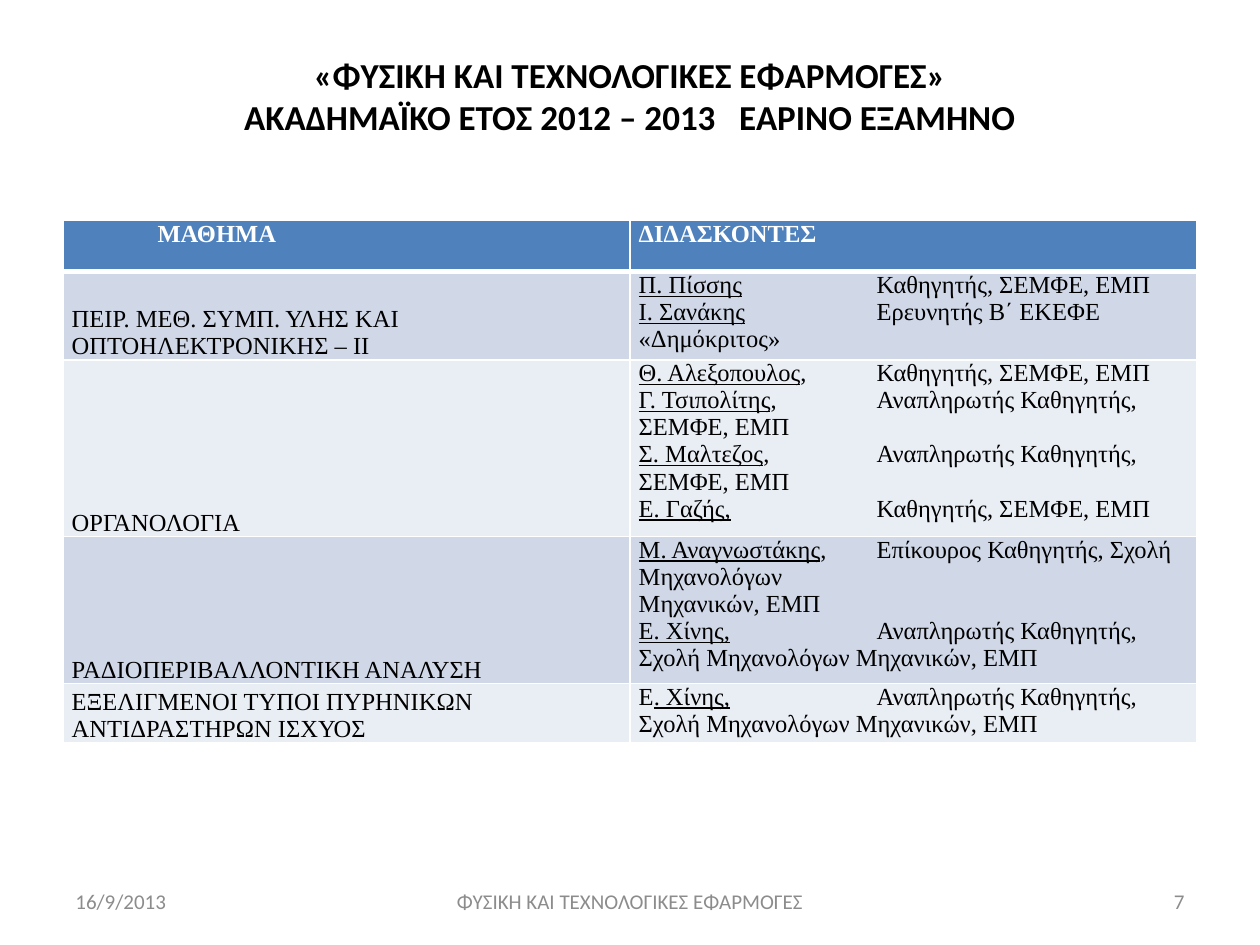
from lxml.etree import SubElement, fromstring
from pptx import Presentation
from pptx.dml.color import RGBColor
from pptx.enum.text import MSO_ANCHOR as Anchor, PP_ALIGN as Align
from pptx.oxml.ns import qn
from pptx.util import Pt

COLORS = {"title": "000000", "body": "000000", "header_text": "FFFFFF", "footer": "8C8C8C",
          "border": "FFFFFF", "header": "4F81BD", "odd": "D0D8E8", "even": "E9EDF4"}
TITLE = ["«ΦΥΣΙΚΗ ΚΑΙ ΤΕΧΝΟΛΟΓΙΚΕΣ ΕΦΑΡΜΟΓΕΣ»",
         "ΑΚΑΔΗΜΑΪΚΟ ΕΤΟΣ 2012 – 2013   ΕΑΡΙΝΟ ΕΞΑΜΗΝΟ"]
HEADERS = ["ΜΑΘΗΜΑ", "ΔΙΔΑΣΚΟΝΤΕΣ"]
COURSES = [
    ("ΠΕΙΡ. ΜΕΘ. ΣΥΜΠ. ΥΛΗΣ ΚΑΙ ΟΠΤΟΗΛΕΚΤΡΟΝΙΚΗΣ – II", [
        "|Π. Πίσσης|\tΚαθηγητής, ΣΕΜΦΕ, ΕΜΠ",
        "|Ι. Σανάκης|\tΕρευνητής Β΄ ΕΚΕΦΕ «Δημόκριτος»"]),
    ("ΟΡΓΑΝΟΛΟΓΙΑ", [
        "|Θ. Αλεξοπουλος|,\tΚαθηγητής, ΣΕΜΦΕ, ΕΜΠ",
        "|Γ. Τσιπολίτης|,\tΑναπληρωτής Καθηγητής, ΣΕΜΦΕ, ΕΜΠ",
        "|Σ. Μαλτεζος|,\tΑναπληρωτής Καθηγητής, ΣΕΜΦΕ, ΕΜΠ",
        "|Ε. Γαζής,|\tΚαθηγητής, ΣΕΜΦΕ, ΕΜΠ"]),
    ("ΡΑΔΙΟΠΕΡΙΒΑΛΛΟΝΤΙΚΗ ΑΝΑΛΥΣΗ", [
        "|Μ. Αναγνωστάκης|,\tΕπίκουρος Καθηγητής, Σχολή Μηχανολόγων",
        "Μηχανικών, ΕΜΠ",
        "|Ε. Χίνης,|\tΑναπληρωτής Καθηγητής, Σχολή Μηχανολόγων Μηχανικών, ΕΜΠ"]),
    ("ΕΞΕΛΙΓΜΕΝΟΙ ΤΥΠΟΙ ΠΥΡΗΝΙΚΩΝ ΑΝΤΙΔΡΑΣΤΗΡΩΝ ΙΣΧΥΟΣ", [
        "Ε|. Χίνης,|\tΑναπληρωτής Καθηγητής, Σχολή Μηχανολόγων Μηχανικών, ΕΜΠ"]),
]


class SlideBuilder:
    """Draws styled text and tables on the current slide."""

    heading_font = "Calibri"
    table_font = "Times New Roman"
    role_tab = 136

    def __init__(self, slide):
        self.slide = slide

    def fill_text(self, frame, lines, font, size, color, bold=False, align=Align.LEFT):
        for index, line in enumerate(lines):
            paragraph = frame.paragraphs[0] if index == 0 else frame.add_paragraph()
            paragraph.alignment = align
            paragraph.font.name = font
            paragraph.font.size = Pt(size)
            paragraph.font.bold = bold
            paragraph.font.color.rgb = RGBColor.from_string(COLORS[color])
            for position, text in enumerate(line.split("|")):
                if text:
                    run = paragraph.add_run()
                    run.text = text
                    if position % 2:
                        run.font.underline = True

    def text(self, box, lines, size, color, bold=False, align=Align.LEFT, bottom=3.6):
        frame = self.slide.shapes.add_textbox(*map(Pt, box)).text_frame
        frame.word_wrap = True
        frame.vertical_anchor = Anchor.MIDDLE
        frame.margin_bottom = Pt(bottom)
        self.fill_text(frame, lines, self.heading_font, size, color, bold, align)

    def border(self, cell, top, bottom):
        properties = cell._tc.get_or_add_tcPr()
        widths = {"lnL": 1, "lnR": 1, "lnT": top, "lnB": bottom}
        for index, (side, width) in enumerate(widths.items()):
            line = fromstring(f'<a:{side} xmlns:a="http://schemas.openxmlformats.org/drawingml/2006/main"'
                              f' w="{Pt(width)}"/>')
            fill = SubElement(line, qn("a:solidFill"))
            SubElement(fill, qn("a:srgbClr"), val=COLORS["border"])
            properties.insert(index, line)

    def cell(self, cell, lines, fill, color="body", bold=False, anchor=Anchor.TOP,
             align=Align.LEFT, top=1, bottom=1):
        cell.fill.solid()
        cell.fill.fore_color.rgb = RGBColor.from_string(COLORS[fill])
        cell.margin_left = cell.margin_right = Pt(5)
        cell.margin_top = cell.margin_bottom = 0
        cell.vertical_anchor = anchor
        self.fill_text(cell.text_frame, lines, self.table_font, 14, color, bold, align)
        self.border(cell, top, bottom)

    def add_role_tab(self, cell):
        for paragraph in cell.text_frame.paragraphs:
            properties = paragraph._p.get_or_add_pPr()
            tabs = SubElement(properties, qn("a:tabLst"))
            SubElement(tabs, qn("a:tab"), pos=str(Pt(self.role_tab)), algn="l")
            properties.insert(0, tabs)

    def table(self, box, headers, courses):
        shape = self.slide.shapes.add_table(len(courses) + 1, len(headers), *map(Pt, box))
        table = shape.table
        for row in table.rows:
            row.height = Pt(29.2)
        for column, header in enumerate(headers):
            cell = table.cell(0, column)
            self.cell(cell, [header], "header", "header_text", True, align=Align.JUSTIFY, bottom=3)
            paragraph = cell.text_frame.paragraphs[0]
            paragraph.space_before = paragraph.space_after = Pt(2)
        table.cell(0, 0).text_frame.paragraphs[0]._p.get_or_add_pPr().set("marL", str(Pt(49)))
        for row, (course, teachers) in enumerate(courses, 1):
            fill = "odd" if row % 2 else "even"
            top = 3 if row == 1 else 1
            self.cell(table.cell(row, 0), [course], fill, anchor=Anchor.BOTTOM, top=top)
            self.cell(table.cell(row, 1), teachers, fill, top=top)
            self.add_role_tab(table.cell(row, 1))
        shape.height = Pt(box[3])


def main():
    presentation = Presentation()
    presentation.slide_width, presentation.slide_height = Pt(720), Pt(540)
    slide = presentation.slides.add_slide(presentation.slide_layouts[6])
    builder = SlideBuilder(slide)
    builder.text((36, 21.6, 648, 90), TITLE, 20, "title", True, Align.CENTER, bottom=28)
    builder.table((36, 126, 648, 298), HEADERS, COURSES)
    for left, width, text, align in [
        (516, 168, "7", Align.RIGHT),
        (36, 168, "16/9/2013", Align.LEFT),
        (246, 228, "ΦΥΣΙΚΗ ΚΑΙ ΤΕΧΝΟΛΟΓΙΚΕΣ ΕΦΑΡΜΟΓΕΣ", Align.CENTER),
    ]:
        builder.text((left, 500.5, width, 28.75), [text], 12, "footer", align=align)
    presentation.save("out.pptx")


if __name__ == "__main__":
    main()
